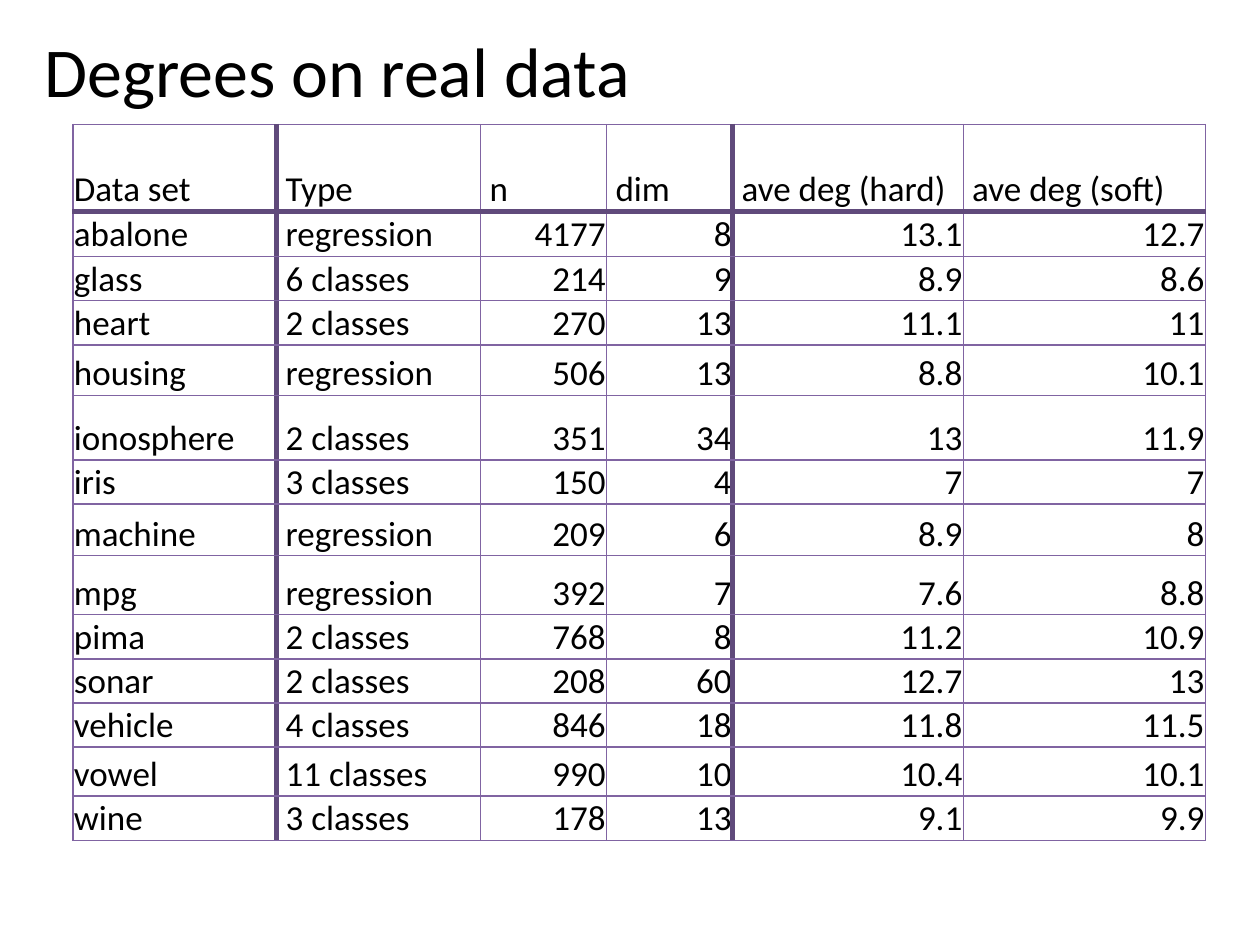
from dataclasses import dataclass

from lxml.etree import SubElement
from pptx import Presentation
from pptx.dml.color import RGBColor
from pptx.enum.text import MSO_ANCHOR, MSO_AUTO_SIZE, PP_ALIGN
from pptx.oxml.ns import qn
from pptx.slide import Slide
from pptx.table import _Cell
from pptx.text.text import _Paragraph
from pptx.util import Cm, Pt


@dataclass(frozen=True)
class Theme:
    font: str = "Calibri"
    text: str = "000000"
    thin_line: str = "8064A2"
    thick_line: str = "604A7B"
    title_size: int = 40
    table_size: int = 20
    thin_width: int = 1
    thick_width: int = 3


@dataclass(frozen=True)
class DataSet:
    name: str
    kind: str
    count: str
    dimension: str
    hard_degree: str
    soft_degree: str
    height: float = 0.89

    def texts(self) -> list[str]:
        return [self.name, f" {self.kind}", self.count, self.dimension,
                self.hard_degree, self.soft_degree]


THEME = Theme()
HEADINGS = ["Data set", " Type", " n", " dim", " ave deg (hard)", " ave deg (soft)"]
HEADER_HEIGHT = 1.75
COLUMN_WIDTHS = [4.11, 4.11, 2.54, 2.54, 4.65, 4.88]
THICK_AFTER_COLUMNS = {0, 3}
FIRST_NUMBER_COLUMN = 2
DATA_SETS = [
    DataSet("abalone", "regression", "4177", "8", "13.1", "12.7", 0.91),
    DataSet("glass", "6 classes", "214", "9", "8.9", "8.6"),
    DataSet("heart", "2 classes", "270", "13", "11.1", "11"),
    DataSet("housing", "regression", "506", "13", "8.8", "10.1", 1.02),
    DataSet("ionosphere", "2 classes", "351", "34", "13", "11.9", 1.3),
    DataSet("iris", "3 classes", "150", "4", "7", "7"),
    DataSet("machine", "regression", "209", "6", "8.9", "8", 1.04),
    DataSet("mpg", "regression", "392", "7", "7.6", "8.8", 1.19),
    DataSet("pima", "2 classes", "768", "8", "11.2", "10.9"),
    DataSet("sonar", "2 classes", "208", "60", "12.7", "13"),
    DataSet("vehicle", "4 classes", "846", "18", "11.8", "11.5"),
    DataSet("vowel", "11 classes", "990", "10", "10.4", "10.1", 0.99),
    DataSet("wine", "3 classes", "178", "13", "9.1", "9.9"),
]


def add_run(paragraph: _Paragraph, text: str, size: int) -> None:
    run = paragraph.add_run()
    run.text = text
    run.font.name = THEME.font
    run.font.size = Pt(size)
    run.font.bold = False
    run.font.color.rgb = RGBColor.from_string(THEME.text)


def set_borders(cell: _Cell, row: int, column: int) -> None:
    thick_sides = {
        "lnL": column - 1 in THICK_AFTER_COLUMNS,
        "lnR": column in THICK_AFTER_COLUMNS,
        "lnT": row == 1,
        "lnB": row == 0,
    }
    properties = cell._tc.get_or_add_tcPr()
    for index, (side, thick) in enumerate(thick_sides.items()):
        width = THEME.thick_width if thick else THEME.thin_width
        line = SubElement(properties, qn(f"a:{side}"), w=str(Pt(width)))
        fill = SubElement(line, qn("a:solidFill"))
        color = THEME.thick_line if thick else THEME.thin_line
        SubElement(fill, qn("a:srgbClr"), val=color)
        properties.insert(index, line)


def fill_cell(cell: _Cell, text: str, row: int, column: int) -> None:
    cell.fill.background()
    cell.vertical_anchor = MSO_ANCHOR.BOTTOM
    cell.margin_left = cell.margin_right = cell.margin_top = Cm(0.02)
    cell.margin_bottom = Cm(0)
    paragraph = cell.text_frame.paragraphs[0]
    is_number = row > 0 and column >= FIRST_NUMBER_COLUMN
    paragraph.alignment = PP_ALIGN.RIGHT if is_number else PP_ALIGN.LEFT
    add_run(paragraph, text, THEME.table_size)
    set_borders(cell, row, column)


def add_title(slide: Slide, text: str) -> None:
    title = slide.shapes.title
    title.left, title.top = Cm(0.64), Cm(0.43)
    title.width, title.height = Cm(12.45), Cm(1.96)
    frame = title.text_frame
    frame.word_wrap = False
    frame.auto_size = MSO_AUTO_SIZE.SHAPE_TO_FIT_TEXT
    frame.vertical_anchor = MSO_ANCHOR.TOP
    frame.paragraphs[0].alignment = PP_ALIGN.LEFT
    add_run(frame.paragraphs[0], text, THEME.title_size)


def add_degree_table(slide: Slide) -> None:
    rows = [HEADINGS] + [data_set.texts() for data_set in DATA_SETS]
    heights = [HEADER_HEIGHT] + [data_set.height for data_set in DATA_SETS]
    table = slide.shapes.add_table(
        len(rows), len(HEADINGS), Cm(1.47), Cm(2.51),
        Cm(sum(COLUMN_WIDTHS)), Cm(sum(heights)),
    ).table
    table.first_row = False
    table.horz_banding = False
    for column, width in zip(table.columns, COLUMN_WIDTHS):
        column.width = Cm(width)
    for row_index, (texts, height) in enumerate(zip(rows, heights)):
        table.rows[row_index].height = Cm(height)
        for column_index, text in enumerate(texts):
            cell = table.cell(row_index, column_index)
            fill_cell(cell, text, row_index, column_index)


def main() -> None:
    presentation = Presentation()
    presentation.slide_width, presentation.slide_height = Cm(25.4), Cm(19.05)
    slide = presentation.slides.add_slide(presentation.slide_layouts.get_by_name("Title Only"))
    add_title(slide, "Degrees on real data")
    add_degree_table(slide)
    presentation.save("out.pptx")


if __name__ == "__main__":
    main()
